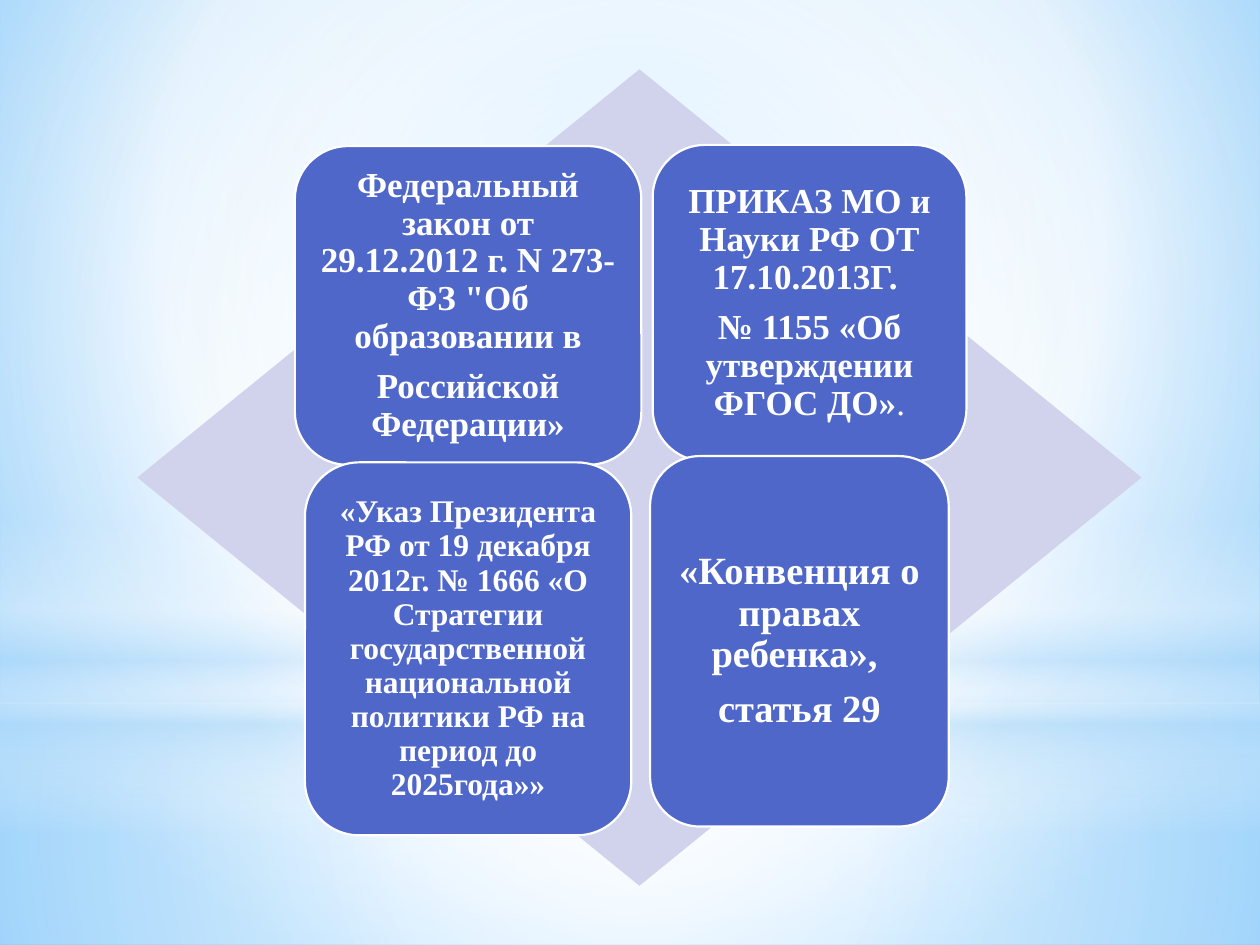
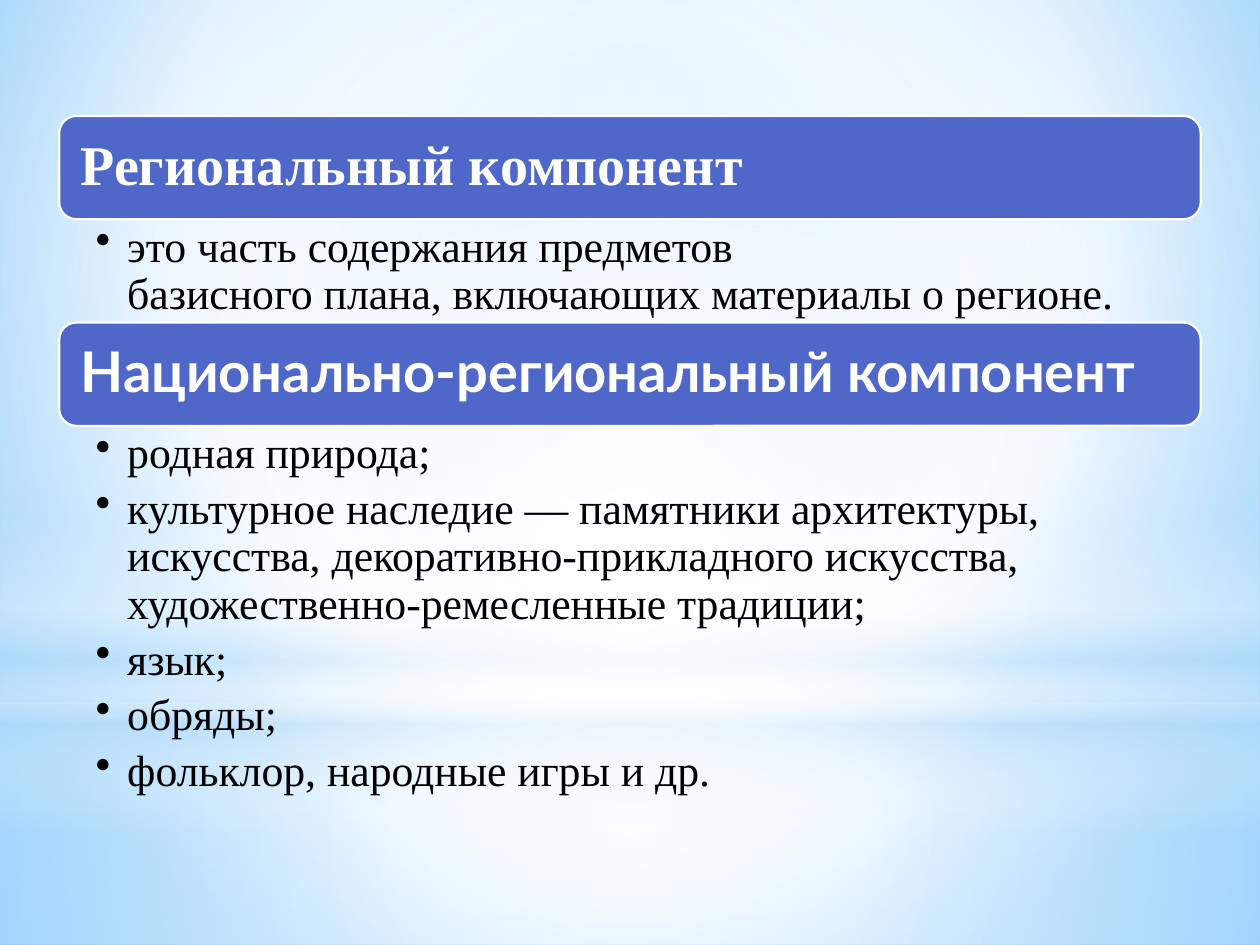
from dataclasses import dataclass
from typing import NamedTuple

from lxml.etree import SubElement
from pptx import Presentation
from pptx.dml.color import RGBColor
from pptx.enum.shapes import MSO_SHAPE
from pptx.enum.text import MSO_ANCHOR, PP_ALIGN
from pptx.oxml.ns import qn
from pptx.util import Pt

PX = 9144
WIDE, HIGH = 1000, 750
BLUE, PALE, WHITE, BLACK, SKY = "4E67C8", "D0D3EB", "FFFFFF", "000000", "B4DCFA"
SERIF, SANS = "Times New Roman", "Lato"


class Box(NamedTuple):
    left: int
    top: int
    width: int
    height: int

    def emu(self) -> list[int]:
        return [side * PX for side in self]


class Stop(NamedTuple):
    place: int
    tint: str
    alpha: int = 100


@dataclass(frozen=True)
class Blend:
    stops: list[Stop]
    focus: tuple[int, ...] = ()


@dataclass(frozen=True)
class Glow:
    box: Box
    blend: Blend
    kind: MSO_SHAPE = MSO_SHAPE.RECTANGLE


@dataclass(frozen=True)
class Style:
    size: int
    font: str = SERIF
    tint: str = WHITE
    bold: bool = True
    align: PP_ALIGN = PP_ALIGN.CENTER
    after: float = 0.35


@dataclass(frozen=True)
class Card:
    box: Box
    text: str
    style: Style
    inset: int
    tail: str = ""


@dataclass(frozen=True)
class Part:
    top: int
    title: str
    font: str
    items: str
    depth: int


CENTER = (50, 50, 50, 50)
BACK = Blend([Stop(0, "9ED5FF"), Stop(60, WHITE), Stop(100, "5BB9FF")], (20, 10, 20, 60))
GLOWS = [
    Glow(Box(0, 558, WIDE, 192),
         Blend([Stop(0, WHITE, 91), Stop(37, WHITE, 76), Stop(100, SKY, 79)], CENTER)),
    Glow(Box(0, 0, WIDE, 558),
         Blend([Stop(0, WHITE, 89), Stop(48, WHITE, 62), Stop(100, SKY, 79)], CENTER)),
    Glow(Box(0, 412, WIDE, 250),
         Blend([Stop(0, WHITE, 0), Stop(29, WHITE, 30), Stop(45, SKY, 40),
                Stop(55, WHITE, 26), Stop(65, SKY, 60), Stop(100, WHITE, 0)])),
    Glow(Box(0, 175, WIDE, 558),
         Blend([Stop(0, WHITE), Stop(56, WHITE, 0)], CENTER), MSO_SHAPE.OVAL),
]

CARDS = [
    Card(Box(234, 116, 275, 253),
         "Федеральный закон от 29.12.2012 г. N 273- ФЗ \"Об образовании в\n"
         "Российской Федерации»", Style(20), 8),
    Card(Box(518, 115, 249, 251),
         "ПРИКАЗ МО и Науки РФ ОТ 17.10.2013Г. \n"
         "№ 1155 «Об утверждении ФГОС ДО»", Style(20), 8, "."),
    Card(Box(242, 367, 259, 296),
         "«Указ Президента РФ от 19 декабря 2012г. № 1666 «О Стратегии "
         "государственной национальной политики РФ на период до 2025года»»",
         Style(18), 7),
    Card(Box(516, 362, 237, 294),
         "«Конвенция о правах ребенка», \nстатья 29", Style(22), 9),
]

PARTS = [
    Part(92, "Региональный компонент", SERIF,
         "это часть содержания предметов\vбазисного плана, включающих материалы о регионе.", 81),
    Part(256, "Национально-региональный компонент", SANS,
         "родная природа;\n"
         "культурное наследие — памятники архитектуры, искусства, "
         "декоративно-прикладного искусства, художественно-ремесленные традиции;\n"
         "язык;\nобряды;\nфольклор, народные игры и др.", 297),
]
LIST = Style(25, tint=BLACK, bold=False, align=PP_ALIGN.LEFT, after=0.2)
EDGE, SPAN, BAR, DENT = 47, 906, 82, 25


def shade(code: str) -> RGBColor:
    return RGBColor.from_string(code)


def blend_fill(props, blend: Blend) -> None:
    solid = props.find(qn("a:solidFill"))
    grad = solid.makeelement(qn("a:gradFill"), {"rotWithShape": "1"})
    stops = SubElement(grad, qn("a:gsLst"))
    for stop in blend.stops:
        node = SubElement(stops, qn("a:gs"), pos=str(stop.place * 1000))
        tint = SubElement(node, qn("a:srgbClr"), val=stop.tint)
        if stop.alpha < 100:
            SubElement(tint, qn("a:alpha"), val=str(stop.alpha * 1000))
    if blend.focus:
        route = SubElement(grad, qn("a:path"), {"path": "circle"})
        sides = {key: str(side * 1000) for key, side in zip("ltrb", blend.focus)}
        SubElement(route, qn("a:fillToRect"), sides)
    else:
        SubElement(grad, qn("a:lin"), ang="5400000", scaled="0")
    props.replace(solid, grad)


def add_form(slide, kind: MSO_SHAPE, box: Box, fill: str, line: str = ""):
    form = slide.shapes.add_shape(kind, *box.emu())
    form.shadow.inherit = False
    form.fill.solid()
    form.fill.fore_color.rgb = shade(fill)
    if line:
        form.line.color.rgb = shade(line)
        form.line.width = Pt(1.25)
    else:
        form.line.fill.background()
    return form


def add_base(deck):
    slide = deck.slides.add_slide(deck.slide_layouts[6])
    fill = slide.background.fill
    fill.solid()
    fill.fore_color.rgb = shade(WHITE)
    blend_fill(slide.element.find(".//" + qn("p:bgPr")), BACK)
    for glow in GLOWS:
        form = add_form(slide, glow.kind, glow.box, WHITE)
        blend_fill(form.element.spPr, glow.blend)
    return slide


def write(form, text: str, style: Style, insets: tuple[int, ...], tail: str = "") -> None:
    frame = form.text_frame
    frame.word_wrap = True
    frame.margin_left, frame.margin_top, frame.margin_right, frame.margin_bottom = (
        side * PX for side in insets)
    frame.text = text
    if tail:
        frame.paragraphs[-1].add_run().text = tail
    for para in frame.paragraphs:
        para.alignment = style.align
        para.line_spacing = 0.9
        para.space_after = Pt(style.size * style.after)
        for run in para.runs:
            run.font.name = style.font
            run.font.size = Pt(style.size)
            run.font.bold = style.bold
            run.font.color.rgb = shade(style.tint)
    if tail:
        frame.paragraphs[-1].runs[-1].font.bold = False


def add_card(slide, card: Card) -> None:
    form = add_form(slide, MSO_SHAPE.ROUNDED_RECTANGLE, card.box, BLUE, WHITE)
    form.text_frame.vertical_anchor = MSO_ANCHOR.MIDDLE
    write(form, card.text, card.style, (card.inset,) * 4, card.tail)


def add_list(slide, box: Box, text: str) -> None:
    form = slide.shapes.add_textbox(*box.emu())
    write(form, text, LIST, (29, 4, 25, 4))
    for para in form.text_frame.paragraphs:
        props = para._p.get_or_add_pPr()
        props.set("marL", str(DENT * PX))
        props.set("indent", str(-DENT * PX))
        SubElement(props, qn("a:buChar"), char="•")


def add_laws(deck) -> None:
    slide = add_base(deck)
    add_form(slide, MSO_SHAPE.DIAMOND, Box(109, 55, 797, 648), PALE)
    for card in CARDS:
        add_card(slide, card)


def add_parts(deck) -> None:
    slide = add_base(deck)
    for part in PARTS:
        style = Style(32, part.font, align=PP_ALIGN.LEFT)
        add_card(slide, Card(Box(EDGE, part.top, SPAN, BAR), part.title, style, 13))
        add_list(slide, Box(EDGE, part.top + BAR, SPAN, part.depth), part.items)


def main() -> None:
    deck = Presentation()
    deck.slide_width, deck.slide_height = WIDE * PX, HIGH * PX
    add_laws(deck)
    add_parts(deck)
    deck.save("out.pptx")


if __name__ == "__main__":
    main()
